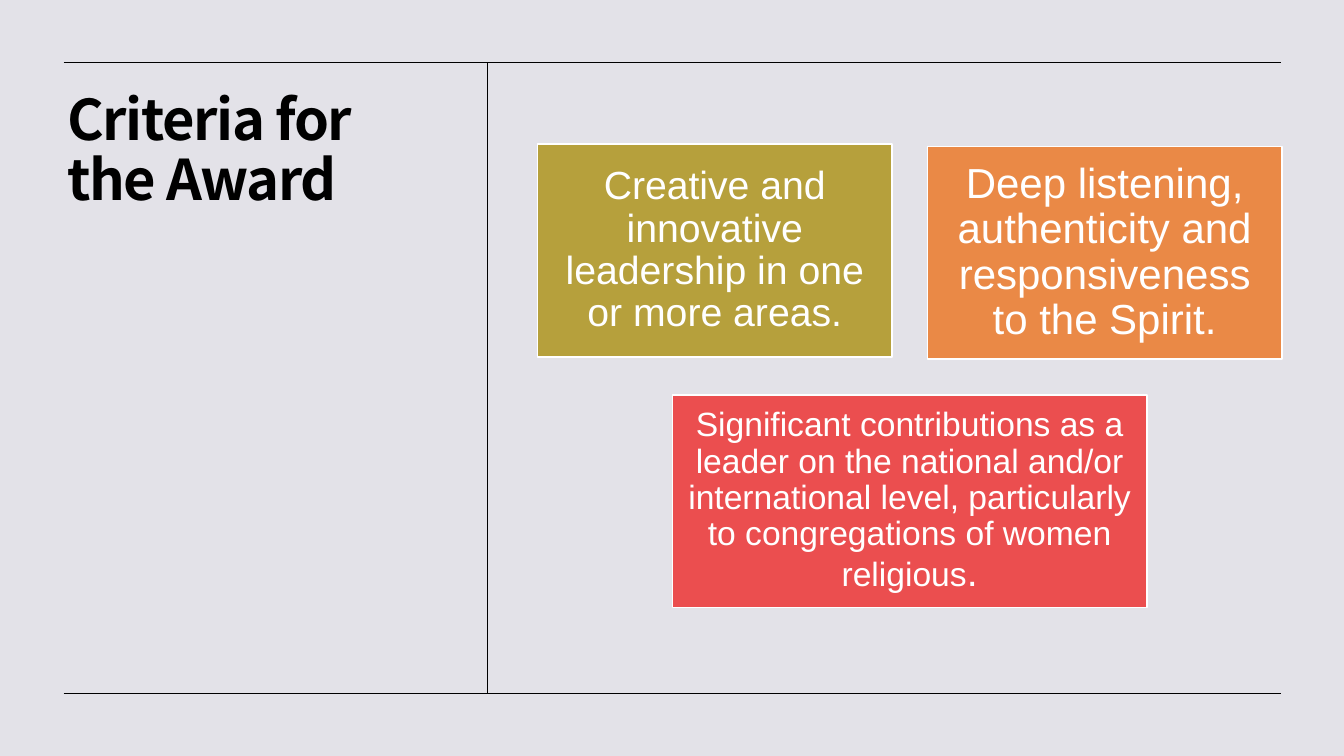
import pptx
import pptx.util
import pptx.dml.color
import pptx.enum.shapes
import pptx.enum.text
import pptx.oxml.ns
import lxml.etree

Pt = pptx.util.Pt
COLORS = {
    "background": "E3E2E8",
    "ink": "000000",
    "paper": "FFFFFF",
    "olive": "B6A03C",
    "orange": "EA8946",
    "red": "EB4E4F",
}


def color(name):
    return pptx.dml.color.RGBColor.from_string(COLORS[name])


def format_span(span, font, size, ink):
    span.font.name = font
    span.font.size = Pt(size)
    span.font.color.rgb = color(ink)


deck = pptx.Presentation()
deck.slide_width = Pt(960)
deck.slide_height = Pt(540)
page = deck.slides.add_slide(deck.slide_layouts[5])
page.background.fill.solid()
page.background.fill.fore_color.rgb = color("background")

title = page.shapes.title
title.left, title.top, title.width, title.height = Pt(41), Pt(62), Pt(271.5), Pt(397.5)
title.text_frame.text = "Criteria for the Award"
title.text_frame.word_wrap = True
title.text_frame.auto_size = pptx.enum.text.MSO_AUTO_SIZE.NONE
title.text_frame.vertical_anchor = pptx.enum.text.MSO_ANCHOR.TOP
para = title.text_frame.paragraphs[0]
para.alignment = pptx.enum.text.PP_ALIGN.LEFT
para.line_spacing = 0.9
span = para.runs[0]
format_span(span, "Noto Sans CJK KR", 40, "ink")
span.font.bold = True
span.font._element.set("spc", "-100")

left, right, top, bottom, divider = 45.4, 915.1, 44.6, 495.4, 347.8
rules = [
    (left, bottom, right, bottom),
    (divider, top, divider, bottom),
    (left, top, right, top),
]
for ends in rules:
    rule = page.shapes.add_connector(
        pptx.enum.shapes.MSO_CONNECTOR.STRAIGHT, *[Pt(end) for end in ends]
    )
    rule.line.color.rgb = color("ink")
    rule.line.width = Pt(0.5)
    lxml.etree.SubElement(rule._element.spPr, pptx.oxml.ns.qn("a:effectLst"))

box_height = 152
criteria = [
    (383.8, 103, 253.4, "olive", 8.4,
     [("Creative and innovative leadership in one or more areas.", 28)]),
    (662.4, 104.6, 253.4, "orange", 8.4,
     [("Deep listening, authenticity and responsiveness to the Spirit.", 30)]),
    (480.2, 282.2, 339.1, "red", 7.2,
     [("Significant contributions as a leader on the national and/or international level, "
       "particularly to congregations of women religious", 24), (".", 28)]),
]
for box_left, box_top, box_width, fill, inset, pieces in criteria:
    box = page.shapes.add_shape(
        pptx.enum.shapes.MSO_SHAPE.RECTANGLE,
        Pt(box_left), Pt(box_top), Pt(box_width), Pt(box_height),
    )
    box.shadow.inherit = False
    box.fill.solid()
    box.fill.fore_color.rgb = color(fill)
    box.line.color.rgb = color("paper")
    box.line.width = Pt(1)
    frame = box.text_frame
    frame.word_wrap = True
    frame.vertical_anchor = pptx.enum.text.MSO_ANCHOR.MIDDLE
    frame.margin_left = frame.margin_right = Pt(inset)
    frame.margin_top = frame.margin_bottom = Pt(inset)
    para = frame.paragraphs[0]
    para.alignment = pptx.enum.text.PP_ALIGN.CENTER
    para.line_spacing = 0.9
    for words, size in pieces:
        span = para.add_run()
        span.text = words
        format_span(span, "Arial", size, "paper")

deck.save("out.pptx")
